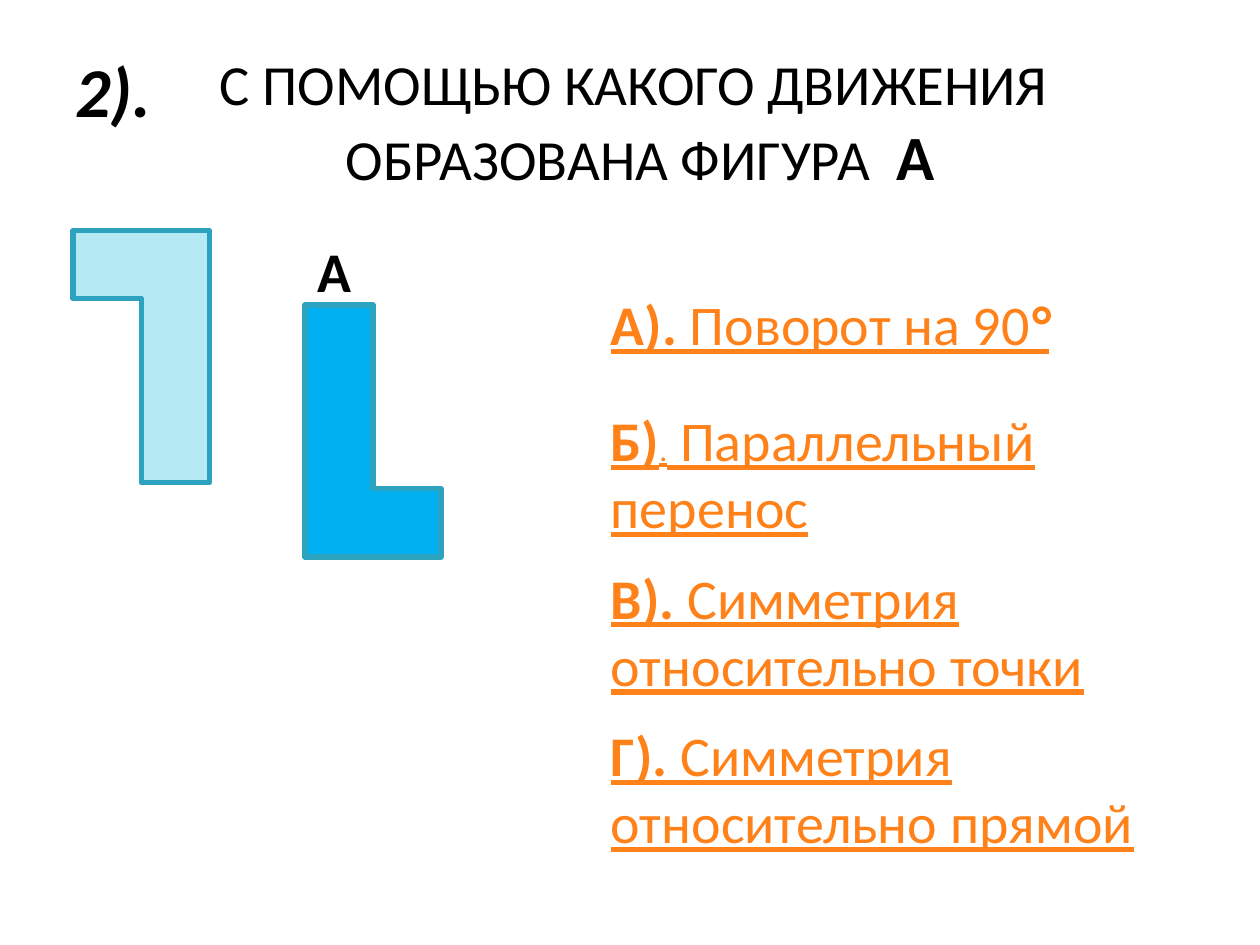
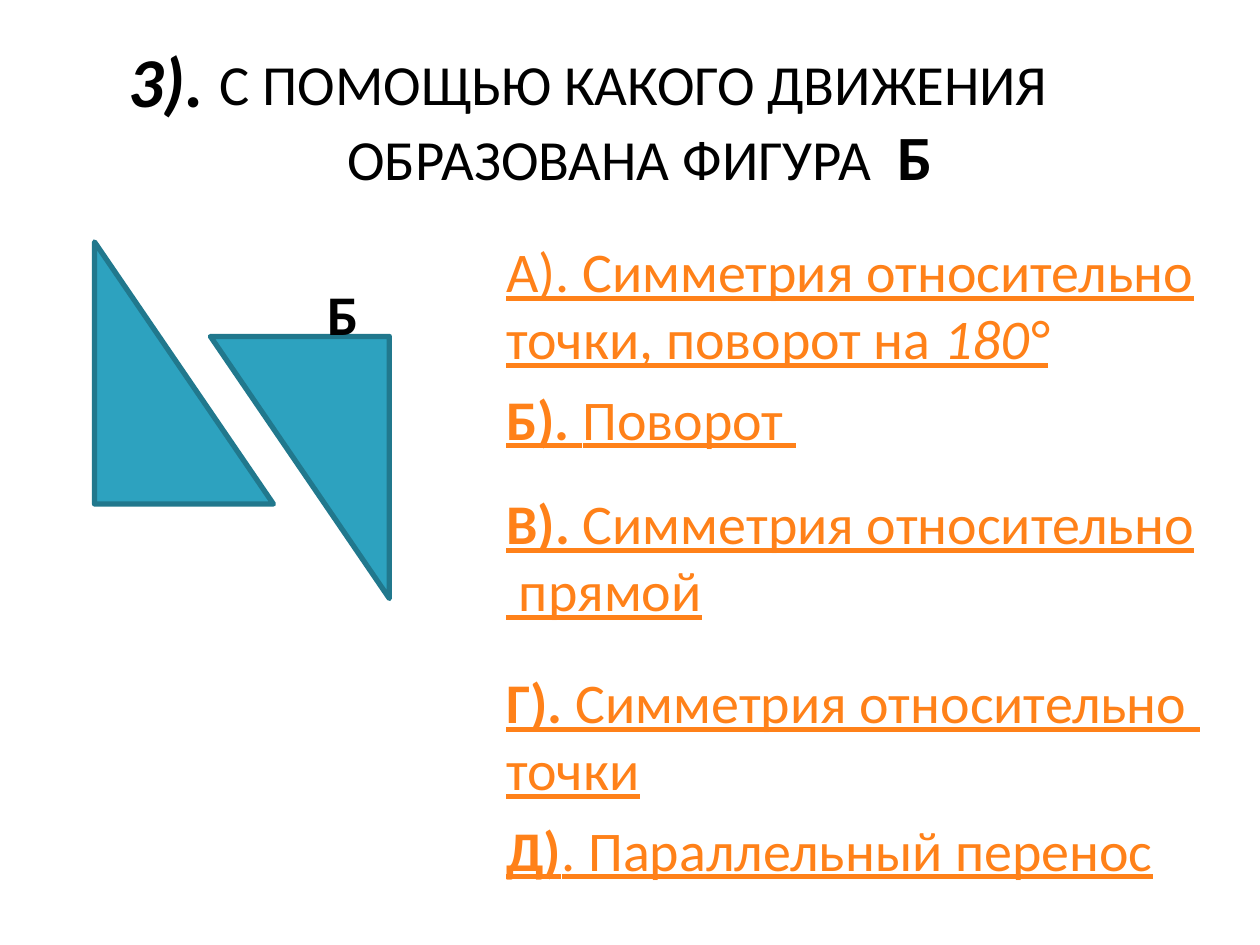
import dataclasses

import pptx
import pptx.dml.color
import pptx.enum.shapes
import pptx.enum.text
import pptx.util

Inches = pptx.util.Inches
SHAPES = pptx.enum.shapes.MSO_SHAPE


@dataclasses.dataclass(frozen=True)
class Theme:
    """Colours, font and type sizes that the quiz slides share."""
    font: str = "Calibri"
    ink: str = "000000"
    answer: str = "FF8119"
    teal: str = "2DA2BF"
    dark_teal: str = "21788D"
    sky: str = "00B0F0"
    pale: str = "B5E9F4"
    outline: float = 3
    title: float = 32.4
    title_letter: float = 36
    number: float = 40
    body: float = 32
    small: float = 18


THEME = Theme()


def rgb(value):
    """Turn a hex string into a colour."""
    return pptx.dml.color.RGBColor.from_string(value)


def add_text(slide, box, paragraphs, colour, size=THEME.body, wrap=True, grow=True):
    """Write paragraphs of (text, style letters, optional size) pieces in a box."""
    frame = slide.shapes.add_textbox(*map(Inches, box)).text_frame
    frame.word_wrap = wrap
    if grow:
        frame.auto_size = pptx.enum.text.MSO_AUTO_SIZE.SHAPE_TO_FIT_TEXT
    for index, pieces in enumerate(paragraphs):
        paragraph = frame.add_paragraph() if index else frame.paragraphs[0]
        for text, style, *own_size in pieces:
            done = len(paragraph.runs)
            if done:
                paragraph.add_run().text = text
            else:
                paragraph.text = text
            for run in paragraph.runs[done:]:
                font = run.font
                font.name = THEME.font
                font.size = pptx.util.Pt(own_size[0] if own_size else size)
                font.color.rgb = rgb(colour)
                font.bold = "b" in style
                font.italic = "i" in style
                font.underline = "u" in style
    return frame


def add_question(slide, number, number_box, letter):
    """Place the question heading and its number."""
    question = [("С ПОМОЩЬЮ КАКОГО ДВИЖЕНИЯ \nОБРАЗОВАНА ФИГУРА  ", ""),
                (letter, "b", THEME.title_letter)]
    heading = add_text(slide, (0.33, 0.5, 9.5, 0.92), [question], THEME.ink,
                       THEME.title, grow=False)
    heading.vertical_anchor = pptx.enum.text.MSO_ANCHOR.MIDDLE
    heading.paragraphs[0].alignment = pptx.enum.text.PP_ALIGN.CENTER
    add_text(slide, number_box, [[(f"{number}).", "bi")]], THEME.ink, THEME.number)


def add_figure(slide, preset, box, fill, outline, rotation=0):
    """Draw one geometric figure."""
    figure = slide.shapes.add_shape(preset, *map(Inches, box))
    figure.shadow.inherit = False
    figure.rotation = rotation
    figure.fill.solid()
    figure.fill.fore_color.rgb = rgb(fill)
    figure.line.color.rgb = rgb(outline)
    figure.line.width = pptx.util.Pt(THEME.outline)


def add_figure_letter(slide, box, letter):
    """Label the resulting figure."""
    add_text(slide, box, [[(letter, "b")]], THEME.ink)


def add_answers(slide, left, answers):
    """Stack the answer choices on a common left edge."""
    for top, width, height, wrap, paragraphs in answers:
        add_text(slide, (left, top, width, height), paragraphs, THEME.answer, wrap=wrap)


def build_corner_slide(slide):
    """Build the question about the two corner figures."""
    size = (1.08, 2)
    add_question(slide, 2, (0.5, 0.33, 0.83, 0.77), "А")
    add_figure(slide, SHAPES.CORNER, (2.42, 2.42, *size), THEME.sky, THEME.teal)
    add_figure(slide, SHAPES.CORNER, (0.58, 1.83, *size), THEME.pale, THEME.teal, 180)
    add_figure_letter(slide, (2.42, 1.83, 1, 0.64), "А")
    add_answers(slide, 4.75, [
        (2.25, 4.5, 0.64, True,
         [[("А). ", "bu"), ("Поворот на 90", "u"), ("°", "biu")]]),
        (3.17, 5, 1.18, True,
         [[("Б)", "bu"), (".", "u", THEME.small), (" Параллельный перенос", "u")]]),
        (4.42, 4.67, 1.18, True,
         [[("В). ", "bu"), ("Симметрия относительно точки", "u")]]),
        (5.67, 4.5, 1.18, True,
         [[("Г). ", "bu"), ("Симметрия относительно прямой", "u")]]),
    ])


def build_triangle_slide(slide):
    """Build the question about the two right triangles."""
    size = (1.42, 2.08)
    colours = (THEME.teal, THEME.dark_teal)
    add_question(slide, 3, (0.92, 0.25, 1, 0.77), "Б")
    add_figure(slide, SHAPES.RIGHT_TRIANGLE, (0.75, 1.92, *size), *colours)
    add_figure(slide, SHAPES.RIGHT_TRIANGLE, (1.67, 2.67, *size), *colours, 180)
    add_figure_letter(slide, (2.5, 2.17, 0.58, 0.64), "Б")
    add_answers(slide, 3.92, [
        (1.83, 6.08, 1.18, True,
         [[("А). Симметрия относительно точки, поворот на ", "u"), ("180°", "iu")]]),
        (3, 3.08, 0.64, True, [[("Б). ", "bu"), ("Поворот ", "u")]]),
        (3.83, 5.71, 1.18, False,
         [[("В). ", "bu"), ("Симметрия относительно", "u")], [(" прямой", "u")]]),
        (5.25, 5.81, 1.18, False,
         [[("Г). ", "bu"), ("Симметрия относительно ", "u")], [("точки", "u")]]),
        (6.42, 5.39, 0.64, False,
         [[("Д)", "bu"), (". Параллельный перенос", "u")]]),
    ])


def main():
    """Build and save the quiz."""
    quiz = pptx.Presentation()
    quiz.slide_width, quiz.slide_height = Inches(10), Inches(7.5)
    for build in (build_corner_slide, build_triangle_slide):
        build(quiz.slides.add_slide(quiz.slide_layouts[6]))
    quiz.save("out.pptx")


if __name__ == "__main__":
    main()
